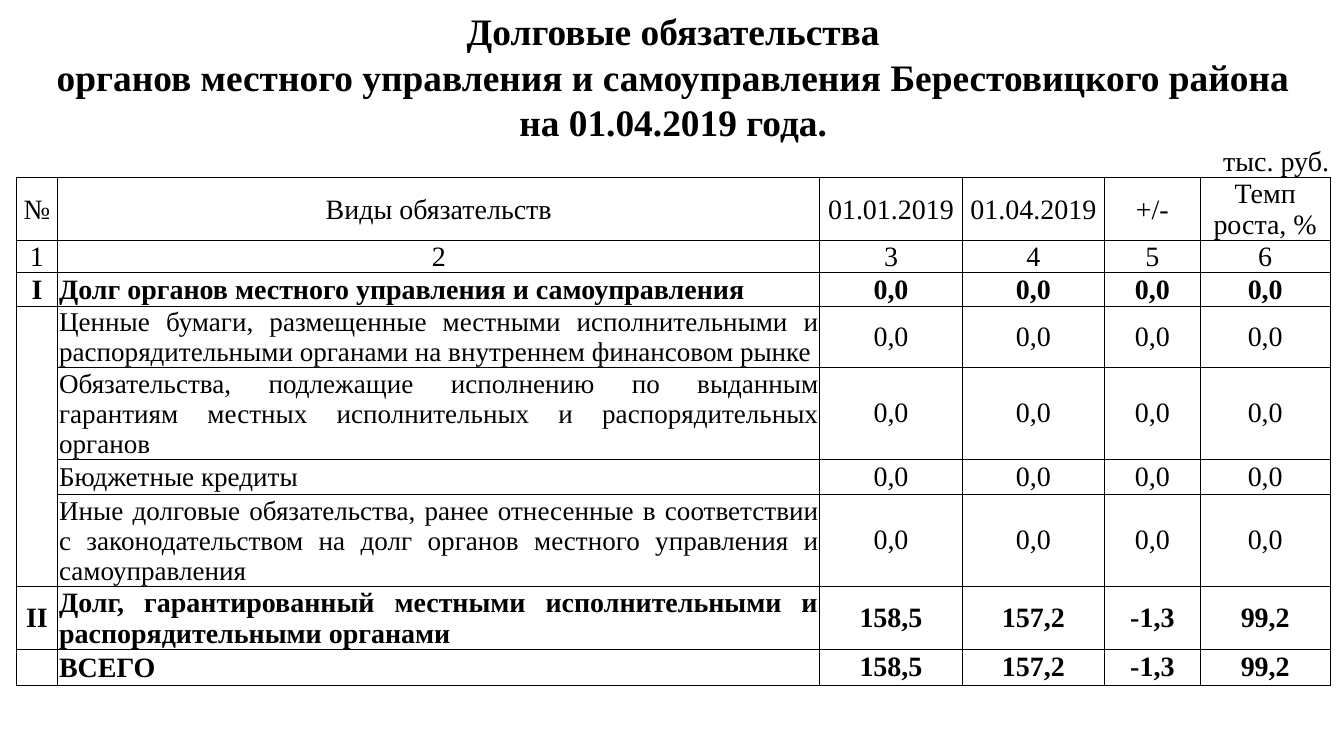
from pptx import Presentation, util as u
from pptx.dml.color import RGBColor
from pptx.enum import text as t
from lxml import etree

THEME = {
    "font": "Times New Roman", "ink": RGBColor(0, 0, 0),
    "paper": RGBColor(255, 255, 255), "line": "000000", "edge": 0.5,
    "head": 20, "text": 15, "note": 14.5,
}
TITLES = [
    "Долговые обязательства",
    "органов местного управления и самоуправления Берестовицкого района",
    "на 01.04.2019 года.",
]
UNIT = "тыс. руб."
HEADS = ["№", "Виды обязательств", "01.01.2019", "01.04.2019", "+/-", "Темп\nроста, %"]
ZERO = ["0,0"] * 4
SUMS = ["158,5", "157,2", "-1,3", "99,2"]
DEBTS = [
    ("I", "Долг органов местного управления и самоуправления", ZERO),
    ("", "Ценные бумаги, размещенные местными исполнительными и распорядительными "
         "органами на внутреннем финансовом рынке", ZERO),
    ("", "Обязательства, подлежащие исполнению по выданным гарантиям местных "
         "исполнительных и распорядительных органов", ZERO),
    ("", "Бюджетные кредиты", ZERO),
    ("", "Иные долговые обязательства, ранее отнесенные в соответствии с "
         "законодательством на долг органов местного управления и самоуправления", ZERO),
    ("II", "Долг, гарантированный местными исполнительными и распорядительными органами", SUMS),
    ("", "ВСЕГО", SUMS),
]
COLS = [0.31, 5.67, 1.06, 1.06, 0.71, 0.97]
ROWS = [0.34] * 3 + [0.24, 0.46, 0.24, 0.24, 0.45, 0.67, 0.24, 0.67, 0.45, 0.25]
LEFT, TOP = 0.12, 0.06
PAD = 0.01
NS = "http://schemas.openxmlformats.org/drawingml/2006/main"
MID, LOW = t.MSO_ANCHOR.MIDDLE, t.MSO_ANCHOR.BOTTOM
MIDDLE, RIGHT = t.PP_ALIGN.CENTER, t.PP_ALIGN.RIGHT
FULL, START = t.PP_ALIGN.JUSTIFY, t.PP_ALIGN.LEFT


def rule(cell, sides):
    props = cell._tc.get_or_add_tcPr()
    for side in "LRTB":
        line = etree.SubElement(props, f"{{{NS}}}ln{side}", w=str(u.Pt(THEME["edge"])))
        if side in sides:
            fill = etree.SubElement(line, f"{{{NS}}}solidFill")
            etree.SubElement(fill, f"{{{NS}}}srgbClr", val=THEME["line"])
        else:
            etree.SubElement(line, f"{{{NS}}}noFill")


def paint(cell, sides, solid=False):
    rule(cell, sides)
    if solid:
        cell.fill.solid()
        cell.fill.fore_color.rgb = THEME["paper"]
    else:
        cell.fill.background()


def write(cell, words, size, bold=False, align=MIDDLE, anchor=MID, foot=0):
    cell.margin_left = cell.margin_right = cell.margin_top = u.Inches(PAD)
    cell.margin_bottom = u.Inches(foot)
    cell.vertical_anchor = anchor
    frame = cell.text_frame
    for i, part in enumerate(words.split("\n")):
        para = frame.paragraphs[0] if i == 0 else frame.add_paragraph()
        para.alignment = align
        if not part:
            etree.SubElement(para._p, f"{{{NS}}}endParaRPr", sz=str(int(size * 100)))
            continue
        run = para.add_run()
        run.text = part
        run.font.name = THEME["font"]
        run.font.size = u.Pt(size)
        run.font.bold = bold
        run.font.color.rgb = THEME["ink"]


def main():
    deck = Presentation()
    deck.slide_width = u.Inches(10)
    deck.slide_height = deck.slide_width * 9 // 16
    slide = deck.slides.add_slide(deck.slide_layouts[6])
    grid = slide.shapes.add_table(
        len(ROWS), len(COLS), u.Inches(LEFT), u.Inches(TOP),
        u.Inches(sum(COLS)), u.Inches(sum(ROWS))).table
    grid.first_row = grid.horz_banding = False
    for col, width in zip(grid.columns, COLS):
        col.width = u.Inches(width)
    for row, height in zip(grid.rows, ROWS):
        row.height = u.Inches(height)

    last = len(COLS) - 1
    unit = len(TITLES)
    for r, words in enumerate(TITLES + [UNIT]):
        grid.cell(r, 0).merge(grid.cell(r, last))
        small = r == unit
        size = THEME["text" if small else "head"]
        for c in range(len(COLS)):
            cell = grid.cell(r, c)
            paint(cell, "B" if small else "", r == unit - 1)
            write(cell, words if c == 0 else "", size, not small,
                  RIGHT if small else MIDDLE, LOW)

    marks = [str(n + 1) for n in range(len(COLS))]
    for r, (row, anchor) in enumerate([(HEADS, MID), (marks, LOW)], unit + 1):
        for c, words in enumerate(row):
            paint(grid.cell(r, c), "LRTB")
            write(grid.cell(r, c), words, THEME["text"], anchor=anchor)

    first = unit + 3
    parts = range(1, len(DEBTS) - 2)
    for i, (mark, name, sums) in enumerate(DEBTS):
        r = first + i
        bold = i not in parts
        sides = "LRTB"
        if not bold:
            sides = "LR" + "T" * (i == parts[0]) + "B" * (i == parts[-1])
        paint(grid.cell(r, 0), sides)
        write(grid.cell(r, 0), mark, THEME["text"], bold)
        paint(grid.cell(r, 1), "LRTB")
        write(grid.cell(r, 1), name, THEME["text" if bold else "note"], bold,
              START if i == len(DEBTS) - 1 else FULL)
        for c, words in enumerate(sums, 2):
            paint(grid.cell(r, c), "LRTB", True)
            write(grid.cell(r, c), words, THEME["text"], bold, foot=PAD)
    deck.save("out.pptx")


if __name__ == "__main__":
    main()
